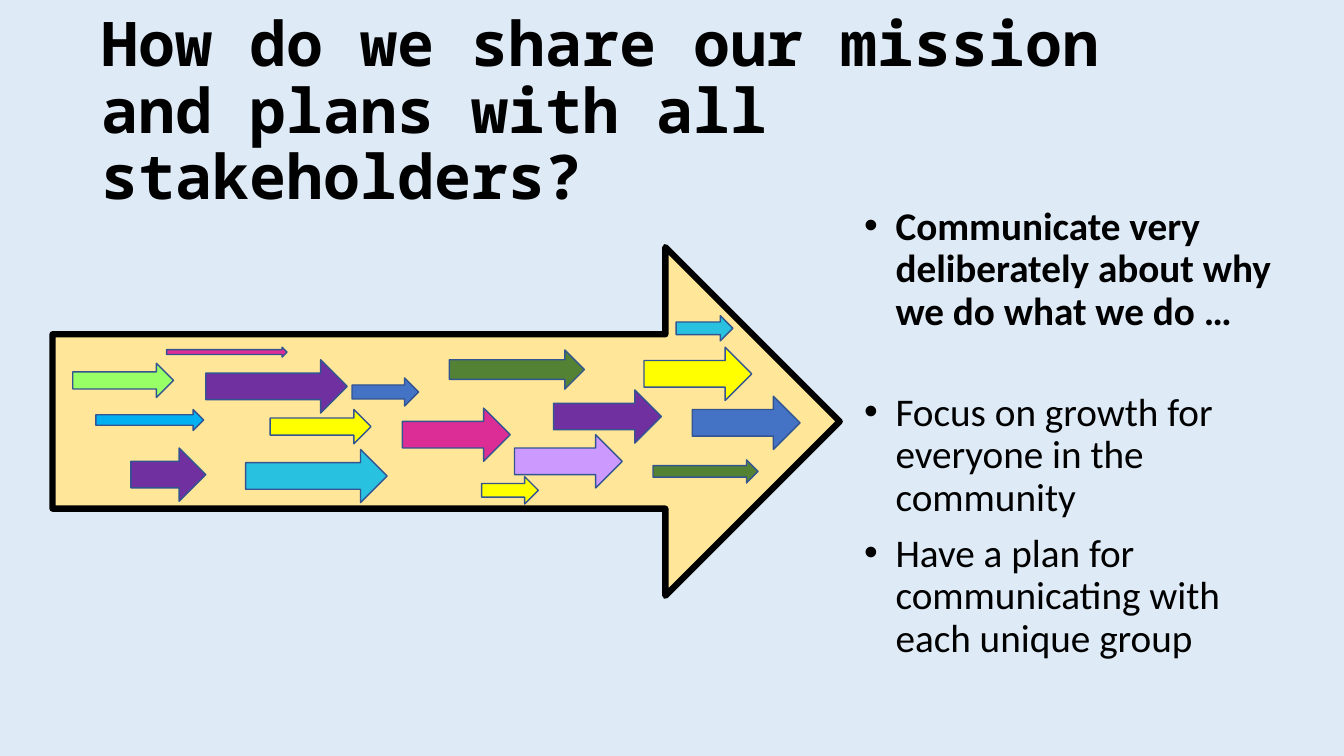
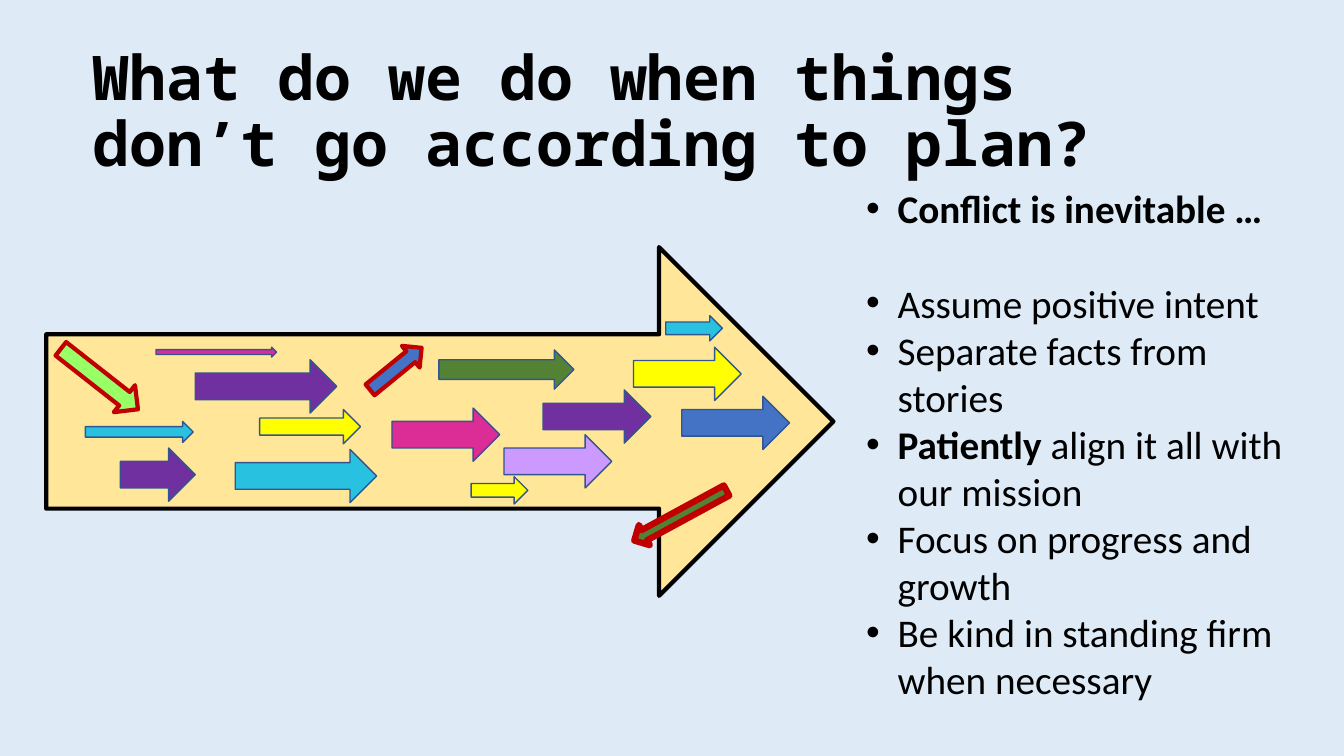
import pptx
import pptx.dml.color
import pptx.enum.shapes
import pptx.enum.text
import pptx.util
from lxml import etree

Pt = pptx.util.Pt
RGB = pptx.dml.color.RGBColor
MSO_SHAPE = pptx.enum.shapes.MSO_SHAPE
TEXT = pptx.enum.text

# Colours
PALE_BLUE = RGB(0xDE, 0xEB, 0xF7)
BLACK = RGB(0x00, 0x00, 0x00)
SAND = RGB(0xFF, 0xE6, 0x99)
OUTLINE = RGB(0x32, 0x54, 0x91)
RED = RGB(0xC0, 0x00, 0x00)
SKY = RGB(0x00, 0xB0, 0xF0)
TEAL = RGB(0x28, 0xC1, 0xE0)
PINK = RGB(0xDC, 0x2C, 0x95)
VIOLET = RGB(0x70, 0x30, 0xA0)
LAVENDER = RGB(0xCC, 0x99, 0xFF)
GREEN = RGB(0x54, 0x82, 0x35)
LIME = RGB(0x99, 0xFF, 0x66)
BLUE = RGB(0x44, 0x72, 0xC4)
YELLOW = RGB(0xFF, 0xFF, 0x00)

# Shared text formats
TITLE_FONT = {"name": "Noto Sans Mono", "size": Pt(44), "bold": True}
BODY_FONT = {"name": "Calibri", "size": Pt(28)}
FRAME = {"word_wrap": True, "auto_size": TEXT.MSO_AUTO_SIZE.NONE}
TITLE_FRAME = {**FRAME, "vertical_anchor": TEXT.MSO_ANCHOR.MIDDLE}
BODY_FRAME = {**FRAME, "vertical_anchor": TEXT.MSO_ANCHOR.TOP}
BULLET_INDENT = Pt(22.5)

# Small arrows: left, top, width, height inside the big arrow, and colour
BIG_SIZE = (562.3, 249.1)
EFFORTS = {
    "sky": (31, 116, 77, 15, SKY),
    "pink": (250, 115, 77, 38, PINK),
    "violet right": (358, 102, 77, 38, VIOLET),
    "green low": (429, 152, 75, 16.5, GREEN),
    "teal": (138, 144.5, 101, 38, TEAL),
    "violet top": (109.5, 80.5, 101, 38, VIOLET),
    "lavender": (330, 134, 77, 38, LAVENDER),
    "blue tip": (457, 106.5, 77, 38, BLUE),
    "yellow tip": (422.5, 71.5, 77, 38, YELLOW),
    "violet low": (56, 143.5, 53.5, 38, VIOLET),
    "green top": (283.5, 73.5, 96.5, 28, GREEN),
    "pink thin": (81.5, 71.5, 86, 7, PINK),
    "blue": (214, 93.5, 47.5, 20, BLUE),
    "yellow": (155.5, 116, 72, 24.5, YELLOW),
    "teal tip": (445.5, 49, 40.5, 18, TEAL),
    "yellow low": (306.5, 164, 40.5, 19.5, YELLOW),
    "lime": (14.5, 83, 72, 24.5, LIME),
}
# Arrows that leave their course: box, fill, line colour, line width, rotation
CONFLICTS = {
    "sky": ((28, 124.5, 77, 15), TEAL, OUTLINE, 1, 0),
    "green low": ((415.5, 183.5, 75, 16.5), GREEN, RED, 4.5, 151.5),
    "blue": ((226, 77, 47.5, 20), BLUE, RED, 3, 320.8),
    "lime": ((3, 82, 70, 24.5), LIME, RED, 3, 38.1),
}


def apply(obj, values):
    for name, value in values.items():
        setattr(obj, name, value)


def place(sp, box):
    apply(sp, dict(zip(("left", "top", "width", "height"), map(Pt, box))))


def add_run(p, text, font):
    r = p.add_run()
    r.text = text
    apply(r.font, font)
    r.font.color.rgb = BLACK


def add_title(s, box, text):
    sp = s.shapes.title
    place(sp, box)
    tf = sp.text_frame
    apply(tf, TITLE_FRAME)
    p = tf.paragraphs[0]
    apply(p, {"alignment": TEXT.PP_ALIGN.LEFT, "line_spacing": 0.9})
    add_run(p, text, TITLE_FONT)


def add_bullets(s, box, items, line_spacing, gap, lead_gap):
    """Fill the body; lead_gap separates the first item from the rest."""
    sp = s.placeholders[1]
    place(sp, box)
    tf = sp.text_frame
    apply(tf, BODY_FRAME)
    for i, runs in enumerate(items):
        p = tf.add_paragraph() if i else tf.paragraphs[0]
        apply(p, {"line_spacing": line_spacing, "space_after": Pt(0),
                  "space_before": Pt(lead_gap if i == 1 else gap)})
        pPr = p._p.get_or_add_pPr()
        pPr.set("marL", str(BULLET_INDENT))
        pPr.set("indent", str(-BULLET_INDENT))
        ns = pPr.nsmap["a"]
        etree.SubElement(pPr, f"{{{ns}}}buFont").set("typeface", "Arial")
        etree.SubElement(pPr, f"{{{ns}}}buChar").set("char", "•")
        for text, bold in runs:
            add_run(p, text, {**BODY_FONT, "bold": bold})


def add_arrow(s, box, fill, line=OUTLINE, width=1, rotation=0):
    sp = s.shapes.add_shape(MSO_SHAPE.RIGHT_ARROW, *map(Pt, box))
    sp.shadow.inherit = False
    sp.fill.solid()
    sp.fill.fore_color.rgb = fill
    sp.line.color.rgb = line
    sp.line.width = Pt(width)
    sp.rotation = rotation


def add_mission_arrow(s, left, top, width, drift=0, conflicts=None):
    """Big arrow at left, top, with the small arrows inside it."""
    conflicts = conflicts or {}
    add_arrow(s, (left, top, *BIG_SIZE), SAND, BLACK, width)
    for name, (x, y, w, h, fill) in EFFORTS.items():
        box, *style = conflicts.get(name, ((x + drift, y, w, h), fill))
        add_arrow(s, (left + box[0], top + box[1], *box[2:]), *style)


def add_mission_slide(prs, title_left, title, arrow, bullets):
    s = prs.slides.add_slide(prs.slide_layouts[1])
    add_title(s, (title_left, 28.8, 828, 104.4), title)
    add_mission_arrow(s, **arrow)
    add_bullets(s, **bullets)


def main():
    prs = pptx.Presentation()
    apply(prs, {"slide_width": Pt(960), "slide_height": Pt(540)})
    fill = prs.slide_master.background.fill
    fill.solid()
    fill.fore_color.rgb = PALE_BLUE

    # Sharing the mission
    add_mission_slide(
        prs, 65.5,
        "How do we share our mission and plans with all stakeholders?",
        {"left": 37.5, "top": 176.5, "width": 4.5},
        {"box": (610, 144, 312.5, 334), "line_spacing": 0.9,
         "gap": 10, "lead_gap": 42,
         "items": [
             [("Communicate very deliberately about why we do what we do …", True)],
             [("Focus on growth for everyone in the community", False)],
             [("Have a plan for communicating with each unique group", False)],
         ]})

    # Handling conflict
    add_mission_slide(
        prs, 59,
        "What do we do when things don’t go according to plan?",
        {"left": 33, "top": 176.5, "width": 3, "drift": -3,
         "conflicts": CONFLICTS},
        {"box": (611.5, 128, 319, 380), "line_spacing": 1.0,
         "gap": 0, "lead_gap": 34,
         "items": [
             [("Conflict is inevitable …", True)],
             [("Assume positive intent", False)],
             [("Separate facts from stories", False)],
             [("Patiently", True), (" align it all with our mission", False)],
             [("Focus on progress and growth", False)],
             [("Be kind in standing firm when necessary", False)],
         ]})

    prs.save("out.pptx")


if __name__ == "__main__":
    main()
